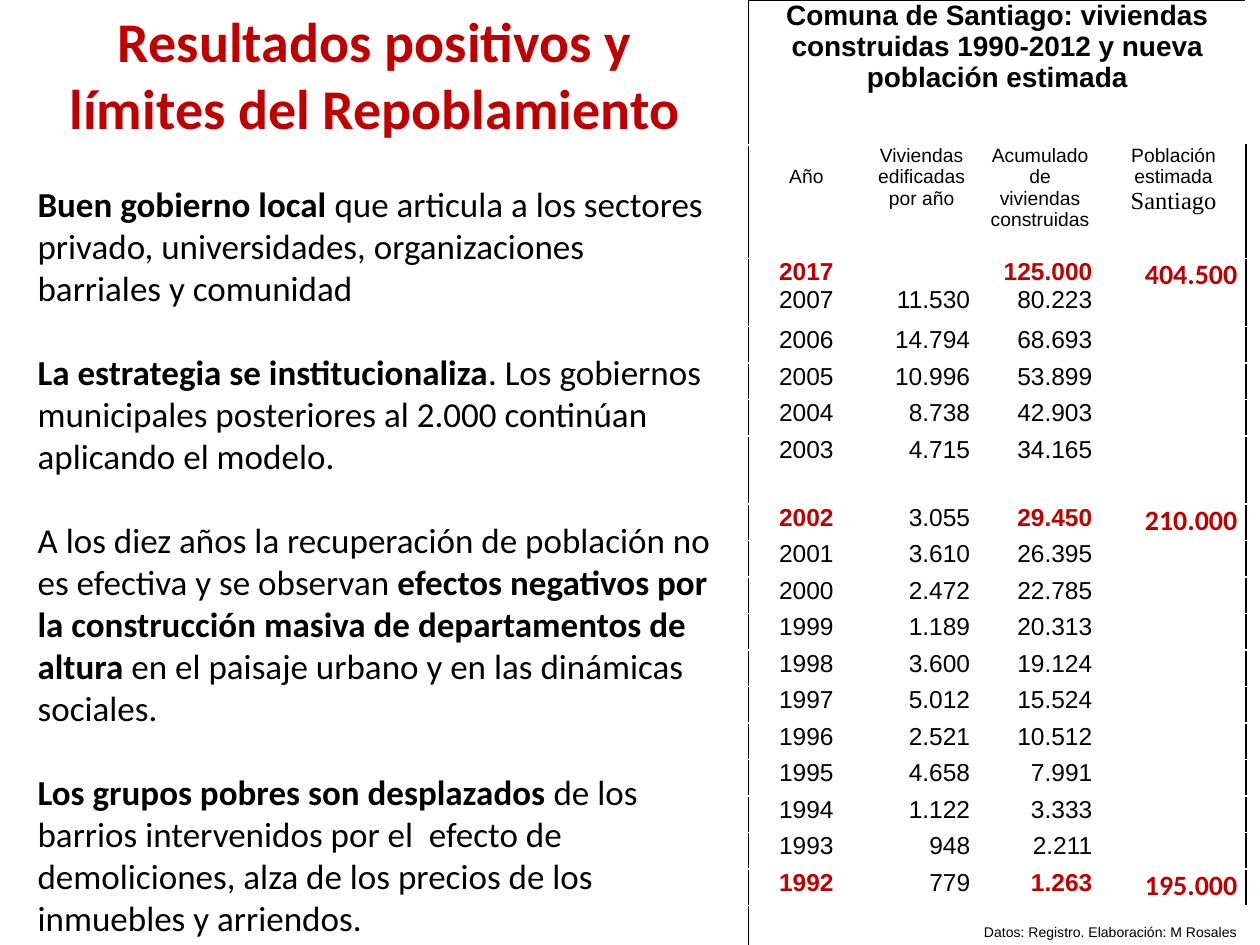
from lxml.etree import SubElement
from pptx import Presentation
from pptx.dml.color import RGBColor
from pptx.enum.text import MSO_ANCHOR, PP_ALIGN
from pptx.oxml.ns import qn
from pptx.util import Inches, Pt

RED = RGBColor(0xC0, 0x00, 0x00)
BLACK = RGBColor(0x00, 0x00, 0x00)
LEFT, CENTER, RIGHT = PP_ALIGN.LEFT, PP_ALIGN.CENTER, PP_ALIGN.RIGHT


def write(frame, text, size=14, font="Arial", color=BLACK, bold=False,
          align=LEFT, space_before=0, same_paragraph=False):
    """Add text in a new paragraph, or at the end of the last one."""
    paragraph = frame.paragraphs[-1]
    if not same_paragraph:
        if paragraph.runs:
            paragraph = frame.add_paragraph()
        paragraph.alignment = align
        paragraph.space_before = Pt(space_before)
    run = paragraph.add_run()
    run.text = text
    run.font.size = Pt(size)
    run.font.name = font
    run.font.bold = bold
    run.font.color.rgb = color


def add_border(cell, side, position):
    properties = cell._tc.get_or_add_tcPr()
    line = SubElement(properties, qn("a:ln" + side), w=str(Pt(1)))
    fill = SubElement(line, qn("a:solidFill"))
    SubElement(fill, qn("a:srgbClr"), val=str(BLACK))
    properties.insert(position, line)


presentation = Presentation()
presentation.slide_width = Inches(10)
presentation.slide_height = Inches(7.5)
slide = presentation.slides.add_slide(presentation.slide_layouts[6])

# Table of dwellings: (year, built, accumulated, population)
records = [
    ("2006", "14.794", "68.693", ""),
    ("2005", "10.996", "53.899", ""),
    ("2004", "8.738", "42.903", ""),
    ("2003", "4.715", "34.165", ""),
    ("2002", "3.055", "29.450", "210.000"),
    ("2001", "3.610", "26.395", ""),
    ("2000", "2.472", "22.785", ""),
    ("1999", "1.189", "20.313", ""),
    ("1998", "3.600", "19.124", ""),
    ("1997", "5.012", "15.524", ""),
    ("1996", "2.521", "10.512", ""),
    ("1995", "4.658", "7.991", ""),
    ("1994", "1.122", "3.333", ""),
    ("1993", "948", "2.211", ""),
    ("1992", "779", "1.263", "195.000"),
]
column_widths = [0.92, 0.91, 0.97, 1.15]
row_heights = [1.15, 0.9, 0.54] + [0.54 if record[0] == "2003" else 0.29
                                   for record in records] + [0.38]
last_row, last_column = len(row_heights) - 1, len(column_widths) - 1

table = slide.shapes.add_table(
    len(row_heights), len(column_widths), Inches(5.94), Inches(0),
    Inches(sum(column_widths)), Inches(sum(row_heights))).table
table.first_row = False
table.horz_banding = False
for column, width in zip(table.columns, column_widths):
    column.width = Inches(width)
for row, height in zip(table.rows, row_heights):
    row.height = Inches(height)

# Cell format and outer frame
for row_index, row in enumerate(table.rows):
    for column_index, cell in enumerate(row.cells):
        cell.fill.background()
        cell.vertical_anchor = MSO_ANCHOR.TOP
        cell.margin_left = cell.margin_right = Inches(0.07)
        cell.margin_top = cell.margin_bottom = 0
        edges = [("L", column_index == 0), ("R", column_index == last_column),
                 ("T", row_index == 0), ("B", row_index == last_row)]
        sides = [side for side, on_edge in edges if on_edge]
        for position, side in enumerate(sides):
            add_border(cell, side, position)
        # Keeps empty cells from stretching their row
        cell.text_frame.paragraphs[0]._p.get_or_add_endParaRPr().set("sz", "1400")

for row_index in (0, last_row):
    table.cell(row_index, 0).merge(table.cell(row_index, last_column))

# Table title and column headings
write(table.cell(0, 0).text_frame,
      "Comuna de Santiago: viviendas construidas 1990-2012 y nueva población estimada",
      size=16, bold=True, align=CENTER)
headings = ["Año", "Viviendas edificadas por año",
            "Acumulado de viviendas construidas", "Población estimada"]
for column_index, heading in enumerate(headings):
    write(table.cell(1, column_index).text_frame, heading, size=11, align=CENTER)
table.cell(1, 0).margin_top = Inches(0.17)
write(table.cell(1, 3).text_frame, "Santiago", font="Times New Roman", align=CENTER)

# Row shared by 2017 and 2007
for column_index, recent, earlier, align in [(0, "2017", "2007", CENTER),
                                             (2, "125.000", "80.223", RIGHT)]:
    frame = table.cell(2, column_index).text_frame
    write(frame, recent, color=RED, bold=True, align=align)
    write(frame, earlier, align=align)
table.cell(2, 1).margin_top = Inches(0.22)
write(table.cell(2, 1).text_frame, "11.530", align=RIGHT)
write(table.cell(2, 3).text_frame, "404.500", size=16, font="Calibri",
      color=RED, bold=True, align=RIGHT)

# Yearly rows; those with a population figure are highlighted
for row_index, (year, built, accumulated, population) in enumerate(records, start=3):
    frames = [table.cell(row_index, index).text_frame for index in range(4)]
    highlight = {"color": RED, "bold": True} if population else {}
    write(frames[0], year, align=CENTER, **highlight)
    write(frames[1], built, align=RIGHT)
    write(frames[2], accumulated, align=RIGHT, **highlight)
    if population:
        write(frames[3], population, size=16, font="Calibri", align=RIGHT, **highlight)

# Data credit
table.cell(last_row, 0).margin_top = Inches(0.15)
write(table.cell(last_row, 0).text_frame,
      "Datos: Registro. Elaboración: M Rosales", size=8, align=RIGHT)

# Title and main points
text_box = slide.shapes.add_textbox(Inches(0.2), Inches(0), Inches(5.55), Inches(7.57))
frame = text_box.text_frame
frame.word_wrap = True
write(frame, "Resultados positivos y límites del Repoblamiento", size=32,
      font="Calibri", color=RED, bold=True, align=CENTER)
points = [
    [("Buen gobierno local ", True),
     ("que articula a los sectores privado, universidades, organizaciones "
      "barriales y comunidad", False)],
    [("La estrategia se institucionaliza", True),
     (". Los gobiernos municipales posteriores al 2.000 continúan aplicando "
      "el modelo.", False)],
    [("A los diez años la recuperación de población no es efectiva y se observan ", False),
     ("efectos negativos por la construcción masiva de departamentos de altura ", True),
     ("en el paisaje urbano y en las dinámicas sociales.", False)],
    [("Los grupos pobres son desplazados ", True),
     ("de los barrios intervenidos por el  efecto de demoliciones, alza de los "
      "precios de los inmuebles y arriendos.", False)],
]
for point in points:
    for index, (text, bold) in enumerate(point):
        write(frame, text, size=20, font="Calibri", bold=bold,
              space_before=24, same_paragraph=index > 0)

presentation.save("out.pptx")
